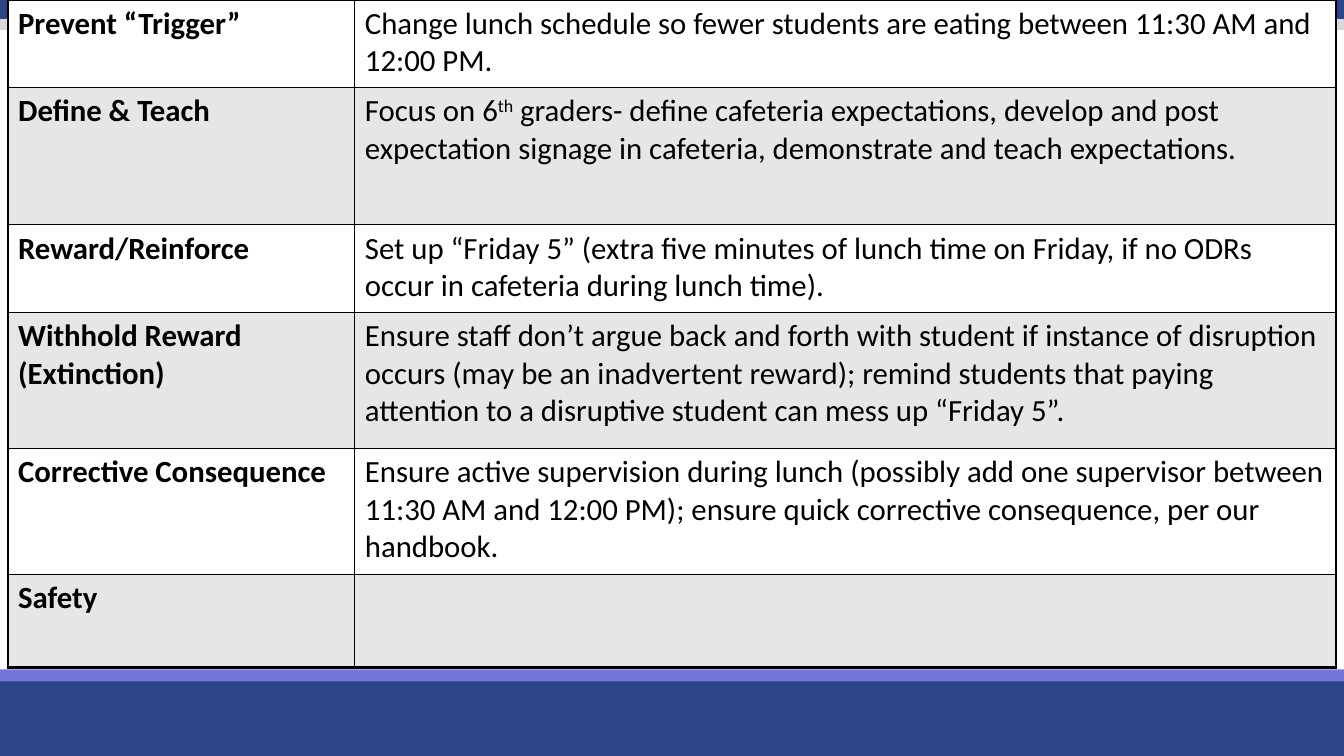
from lxml.etree import SubElement
from pptx import Presentation
from pptx.dml.color import RGBColor
from pptx.enum.shapes import MSO_SHAPE
from pptx.oxml.ns import qn
from pptx.util import Inches, Pt

COLORS = {
    "navy": "2E4488",
    "violet": "7476DA",
    "silver": "D9D9D9",
    "white": "FFFFFF",
    "band": "E7E6E6",
    "ink": "000000",
}

BARS = [
    (6.7, 0.8, "navy"),
    (6.64, 0.12, "violet"),
    (-0.03, 0.22, "navy"),
    (0.19, 0.11, "silver"),
]

COLUMN_WIDTHS = [3.44, 9.73]

STRATEGIES = [
    (0.87, "Prevent “Trigger”",
     ["Change lunch schedule so fewer students are eating between 11:30 AM and 12:00 PM."]),
    (1.36, "Define & Teach",
     ["Focus on 6", "th",
      " graders- define cafeteria expectations, develop and post expectation signage "
      "in cafeteria, demonstrate and teach expectations."]),
    (0.87, "Reward/Reinforce",
     ["Set up “Friday 5” (extra five minutes of lunch time on Friday, if no ODRs "
      "occur in cafeteria during lunch time)."]),
    (1.35, "Withhold Reward (Extinction)",
     ["Ensure staff don’t argue back and forth with student if instance of disruption "
      "occurs (may be an inadvertent reward); remind students that paying attention "
      "to a disruptive student can mess up “Friday 5”."]),
    (1.25, "Corrective Consequence",
     ["Ensure active supervision during lunch (possibly add one supervisor between "
      "11:30 AM and 12:00 PM); ensure quick corrective consequence, per our handbook."]),
    (0.92, "Safety", []),
]


def rgb(name):
    return RGBColor.from_string(COLORS[name])


class Deck:
    text_format = {"name": "Calibri", "size": Pt(22)}
    outer, inner = Pt(2.25), Pt(1)

    def __init__(self, width, height):
        self.prs = Presentation()
        self.prs.slide_width, self.prs.slide_height = Inches(width), Inches(height)
        self.s = self.prs.slides.add_slide(self.prs.slide_layouts[6])

    def bar(self, top, height, color):
        sp = self.s.shapes.add_shape(
            MSO_SHAPE.RECTANGLE, 0, Inches(top), self.prs.slide_width, Inches(height))
        sp.shadow.inherit = False
        sp.fill.solid()
        sp.fill.fore_color.rgb = rgb(color)
        sp.line.fill.background()

    def borders(self, cell, widths):
        tcPr = cell._tc.get_or_add_tcPr()
        for side, width in zip("LRTB", widths):
            ln = SubElement(tcPr, qn(f"a:ln{side}"), w=str(width))
            fill = SubElement(ln, qn("a:solidFill"))
            SubElement(fill, qn("a:srgbClr"), val=COLORS["ink"])

    def text(self, cell, runs, bold):
        p = cell.text_frame.paragraphs[0]
        for text in runs:
            r = p.add_run()
            r.text = text
            for key, value in self.text_format.items():
                setattr(r.font, key, value)
            r.font.bold = bold
            r.font.color.rgb = rgb("ink")
            if text == "th":
                r._r.get_or_add_rPr().set("baseline", "30000")

    def table(self, left, top, widths, rows):
        last_row, last_col = len(rows) - 1, len(widths) - 1
        table = self.s.shapes.add_table(
            len(rows), len(widths), Inches(left), Inches(top),
            Inches(sum(widths)), Inches(sum(row[0] for row in rows))).table
        table.first_row = table.horz_banding = False
        for column, width in zip(table.columns, widths):
            column.width = Inches(width)
        for i, (height, label, action) in enumerate(rows):
            table.rows[i].height = Inches(height)
            for j, runs in enumerate([[label], action]):
                cell = table.cell(i, j)
                edges = [j == 0, j == last_col, i == 0, i == last_row]
                self.borders(cell, [self.outer if e else self.inner for e in edges])
                cell.fill.solid()
                cell.fill.fore_color.rgb = rgb("band" if i % 2 else "white")
                self.text(cell, runs, bold=j == 0)


def main():
    deck = Deck(13.33, 7.5)
    for bar in BARS:
        deck.bar(*bar)
    deck.table(0.08, 0, COLUMN_WIDTHS, STRATEGIES)
    deck.prs.save("out.pptx")


if __name__ == "__main__":
    main()
